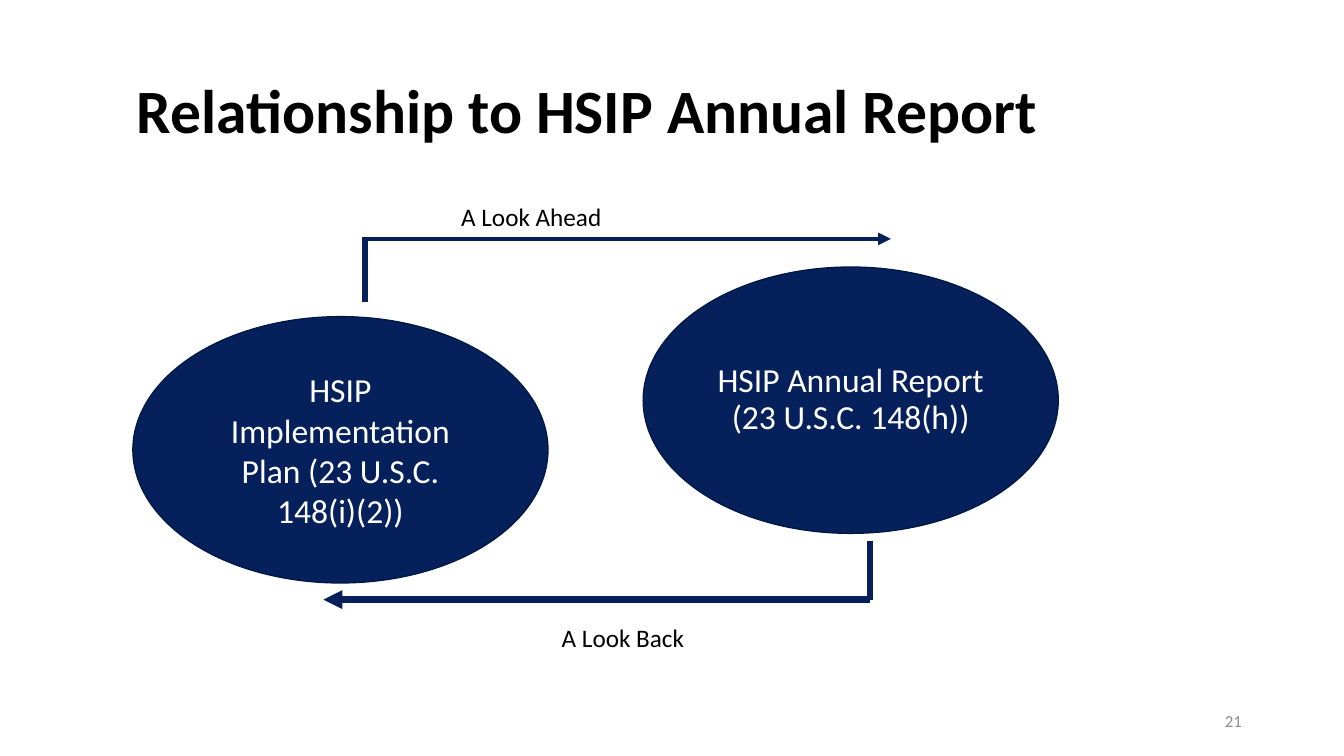
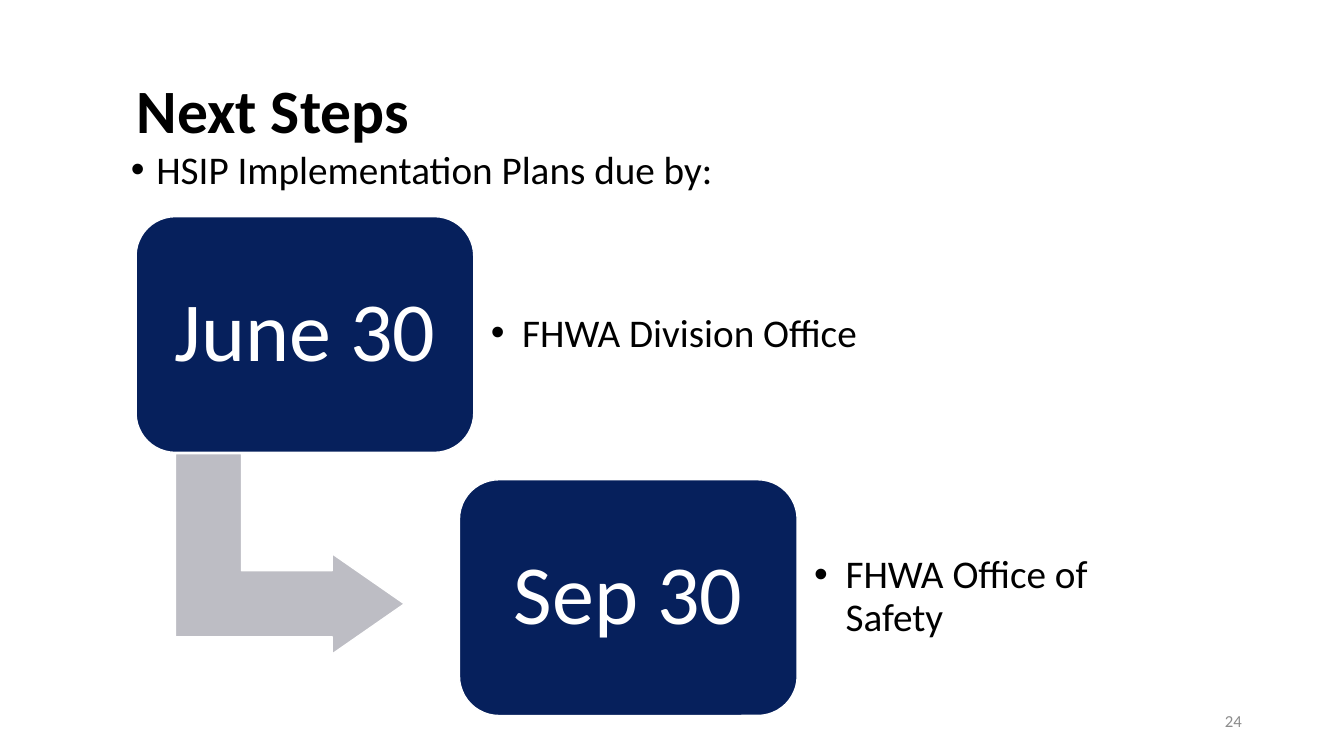
"""Build two slides on HSIP reporting: a cycle diagram and a list of due dates."""
from dataclasses import dataclass

from lxml import etree
from pptx import Presentation
from pptx.dml.color import RGBColor
from pptx.enum.shapes import MSO_CONNECTOR, MSO_SHAPE
from pptx.enum.text import MSO_ANCHOR, MSO_AUTO_SIZE, PP_ALIGN
from pptx.oxml.ns import qn
from pptx.util import Cm, Pt

STRAIGHT = MSO_CONNECTOR.STRAIGHT
ELLIPSE, CARD, BENT_ARROW = MSO_SHAPE.OVAL, MSO_SHAPE.ROUNDED_RECTANGLE, MSO_SHAPE.BENT_UP_ARROW
TOP, MIDDLE = MSO_ANCHOR.TOP, MSO_ANCHOR.MIDDLE
LEFT, CENTER, RIGHT = PP_ALIGN.LEFT, PP_ALIGN.CENTER, PP_ALIGN.RIGHT
NO_FIT = MSO_AUTO_SIZE.NONE
TITLE_ONLY = 5


@dataclass(frozen=True)
class Theme:
    """Colours, font and type sizes of the deck."""
    font: str = "Calibri"
    navy: str = "06205C"
    navy_edge: str = "001844"
    gray: str = "BDBDC4"
    muted: str = "8C8C8C"
    black: str = "000000"
    white: str = "FFFFFF"
    title: int = 44
    date: int = 60
    body: int = 28
    node: int = 24
    label: int = 18
    number: int = 12


@dataclass(frozen=True)
class Box:
    """Position and size in centimetres."""
    x: float
    y: float
    w: float
    h: float

    def lengths(self) -> tuple:
        """Return left, top, width and height as lengths."""
        return Cm(self.x), Cm(self.y), Cm(self.w), Cm(self.h)


@dataclass(frozen=True)
class Text:
    """Wording and format of one paragraph, with insets and indents in centimetres."""
    text: str
    size: int
    color: str
    align: PP_ALIGN = LEFT
    anchor: MSO_ANCHOR = MIDDLE
    bold: bool = False
    spacing: float = 1.0
    inset_x: float = 0.25
    inset_y: float = 0.13
    bullet: float = 0


@dataclass(frozen=True)
class Segment:
    """Straight line between two points in centimetres."""
    x1: float
    y1: float
    x2: float
    y2: float
    width: float
    arrow: bool = False


@dataclass(frozen=True)
class Node:
    """Ellipse of the cycle diagram."""
    x: float
    y: float
    text: str
    spacing: float


THEME = Theme()
TITLE_BOX = Box(3.2, 1.02, 29.21, 3.68)
NUMBER_BOX = Box(23.93, 17.65, 7.62, 1.02)

NODES = (
    Node(16.21, 6.73, "HSIP Annual Report (23 U.S.C. 148(h))", 0.9),
    Node(3.35, 7.98, "HSIP Implementation Plan (23 U.S.C. 148(i)(2))", 1.0),
)
SEGMENTS = (
    Segment(9.19, 7.62, 9.19, 6.02, 4.5),
    Segment(9.12, 6.02, 22.45, 6.02, 3, True),
    Segment(21.92, 15.11, 8.15, 15.11, 4.5, True),
    Segment(21.92, 15.11, 21.92, 13.64, 4.5),
)
LABELS = (("A Look Ahead", 6.72, 4.95), ("A Look Back", 9.03, 15.54))

STEPS = (("June 30", "FHWA Division Office"), ("Sep 30", "FHWA Office of Safety"))
FIRST_CARD = Box(3.43, 5.46, 8.51, 5.94)
STEP_X, STEP_Y = 8.15, 6.63
DETAIL_RIGHT = 30.35


def rgb(color: str) -> RGBColor:
    """Return a colour object for a hex string."""
    return RGBColor.from_string(color)


def set_attrs(target, values: dict) -> None:
    """Set every named attribute on the target."""
    for name, value in values.items():
        setattr(target, name, value)


def write(sp, text: Text) -> None:
    """Fill a shape with one formatted paragraph."""
    tf = sp.text_frame
    set_attrs(tf, {
        "word_wrap": True, "auto_size": NO_FIT, "vertical_anchor": text.anchor,
        "margin_left": Cm(text.inset_x), "margin_right": Cm(text.inset_x),
        "margin_top": Cm(text.inset_y), "margin_bottom": Cm(text.inset_y),
    })
    p = tf.paragraphs[0]
    if text.bullet:
        ppr = p._p.get_or_add_pPr()
        ppr.set("marL", str(Cm(text.bullet)))
        ppr.set("indent", str(-Cm(text.bullet)))
        etree.SubElement(ppr, qn("a:buFont"), typeface="Arial")
        etree.SubElement(ppr, qn("a:buChar"), char="•")
    set_attrs(p, {"alignment": text.align, "line_spacing": text.spacing})
    r = p.add_run()
    r.text = text.text
    set_attrs(r.font, {"name": THEME.font, "size": Pt(text.size), "bold": text.bold})
    r.font.color.rgb = rgb(text.color)


def add_text(s, box: Box, text: Text) -> None:
    """Add a text box."""
    write(s.shapes.add_textbox(*box.lengths()), text)


def add_block(s, kind: MSO_SHAPE, box: Box, fill: str, edge: str):
    """Add a filled and outlined preset shape."""
    sp = s.shapes.add_shape(kind, *box.lengths())
    sp.shadow.inherit = False
    sp.fill.solid()
    sp.fill.fore_color.rgb = rgb(fill)
    sp.line.color.rgb = rgb(edge)
    sp.line.width = Pt(1)
    return sp


def add_segment(s, seg: Segment) -> None:
    """Add a straight line, with an arrowhead at its end if asked."""
    line = s.shapes.add_connector(STRAIGHT, Cm(seg.x1), Cm(seg.y1), Cm(seg.x2), Cm(seg.y2))
    line.line.color.rgb = rgb(THEME.navy)
    line.line.width = Pt(seg.width)
    if seg.arrow:
        etree.SubElement(line.line._get_or_add_ln(), qn("a:tailEnd"), type="triangle")
    etree.SubElement(line._element.spPr, qn("a:effectLst"))


def add_slide(prs, title: str, number: int):
    """Add a slide with its title and page number."""
    s = prs.slides.add_slide(prs.slide_layouts[TITLE_ONLY])
    sp = s.shapes.title
    set_attrs(sp, dict(zip(("left", "top", "width", "height"), TITLE_BOX.lengths())))
    write(sp, Text(title, THEME.title, THEME.black, bold=True, spacing=0.9))
    add_text(s, NUMBER_BOX, Text(str(number), THEME.number, THEME.muted, RIGHT))
    return s


def add_cycle_slide(prs) -> None:
    """Draw the plan and the report as a cycle."""
    s = add_slide(prs, "Relationship to HSIP Annual Report", 21)
    for label, x, y in LABELS:
        add_text(s, Box(x, y, 13.34, 1.07), Text(label, THEME.label, THEME.black, CENTER, TOP))
    for seg in SEGMENTS:
        add_segment(s, seg)
    for node in NODES:
        sp = add_block(s, ELLIPSE, Box(node.x, node.y, 10.46, 6.71), THEME.navy, THEME.navy_edge)
        write(sp, Text(node.text, THEME.node, THEME.white, CENTER, spacing=node.spacing))


def add_steps_slide(prs) -> None:
    """Draw the due dates as descending cards."""
    s = add_slide(prs, "Next Steps", 24)
    add_text(s, Box(3.05, 3.66, 29.21, 1.4),
             Text("HSIP Implementation Plans due by:", THEME.body, THEME.black,
                  anchor=TOP, spacing=0.9, bullet=0.64))
    arrow = add_block(s, BENT_ARROW, Box(4.78, 11.07, 5.05, 5.77), THEME.gray, THEME.white)
    arrow.rotation = 90
    for i, value in enumerate((0.33, 0.25, 0.36)):
        arrow.adjustments[i] = value
    for i, (date, office) in enumerate(STEPS):
        x, y = FIRST_CARD.x + i * STEP_X, FIRST_CARD.y + i * STEP_Y
        card = add_block(s, CARD, Box(x, y, FIRST_CARD.w, FIRST_CARD.h), THEME.navy, THEME.white)
        write(card, Text(date, THEME.date, THEME.white, CENTER, spacing=0.9))
        detail_x = x + FIRST_CARD.w + 0.05
        add_text(s, Box(detail_x, y + 0.55, DETAIL_RIGHT - detail_x, 4.83),
                 Text(office, THEME.body, THEME.black, spacing=0.9,
                      inset_x=0.38, inset_y=0.38, bullet=0.79))


def main() -> None:
    """Build and save the deck."""
    prs = Presentation()
    set_attrs(prs, {"slide_width": Cm(33.87), "slide_height": Cm(19.05)})
    add_cycle_slide(prs)
    add_steps_slide(prs)
    prs.save("out.pptx")


if __name__ == "__main__":
    main()
